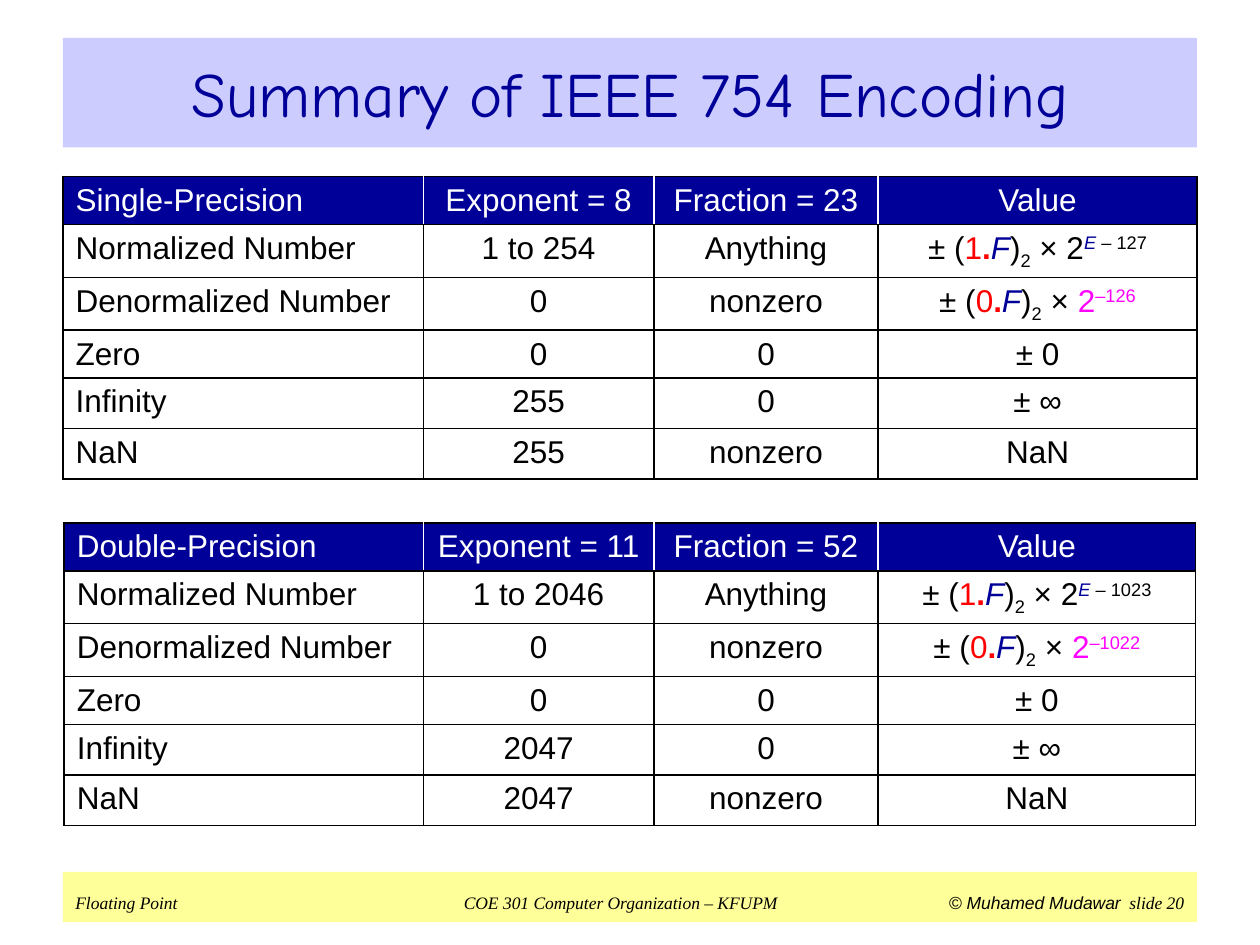
from lxml import etree
from pptx import Presentation
from pptx.dml.color import RGBColor
from pptx.enum.shapes import MSO_SHAPE
from pptx.enum.text import MSO_ANCHOR, PP_ALIGN
from pptx.oxml.ns import qn
from pptx.util import Inches, Pt

RECTANGLE = MSO_SHAPE.RECTANGLE
MIDDLE, TOP = MSO_ANCHOR.MIDDLE, MSO_ANCHOR.TOP
CENTER, LEFT = PP_ALIGN.CENTER, PP_ALIGN.LEFT

COLORS = {
    "navy": "000099", "lavender": "CCCCFF", "yellow": "FFFF99", "black": "000000",
    "white": "FFFFFF", "red": "FF0000", "magenta": "FF00FF",
}
ROW_HEIGHTS = [0.38, 0.42, 0.42, 0.38, 0.4, 0.4]


def add_run(paragraph, text, size=18, font="Arial", color="black",
            bold=False, italic=False, baseline=0):
    run = paragraph.add_run()
    run.text = text
    run.font.size = Pt(size)
    run.font.name = font
    run.font.bold = bold
    run.font.italic = italic
    run.font.color.rgb = RGBColor.from_string(COLORS[color])
    if baseline:
        run.font._element.set("baseline", str(baseline * 1000))


def add_band(slide, box, color, anchor):
    """Add a plain filled rectangle and return its paragraph."""
    band = slide.shapes.add_shape(RECTANGLE, *map(Inches, box))
    band.shadow.inherit = False
    band.fill.solid()
    band.fill.fore_color.rgb = RGBColor.from_string(COLORS[color])
    band.line.fill.background()
    band.text_frame.word_wrap = True
    band.text_frame.vertical_anchor = anchor
    return band.text_frame.paragraphs[0]


def add_title(slide, box):
    paragraph = add_band(slide, box, "lavender", MIDDLE)
    paragraph.alignment = CENTER
    add_run(paragraph, "Summary of IEEE 754 Encoding", 36, "Comic Neue", "navy")


def add_footer(slide, box):
    paragraph = add_band(slide, box, "yellow", TOP)
    paragraph.alignment = LEFT
    tabs = etree.SubElement(paragraph._p.get_or_add_pPr(), qn("a:tabLst"))
    for position, alignment in ((4.31, "ctr"), (8.8, "r")):
        etree.SubElement(tabs, qn("a:tab"), pos=str(Inches(position)), algn=alignment)
    serif = {"size": 10, "font": "Times New Roman", "italic": True}
    add_run(paragraph, "Floating Point\t COE 301 Computer Organization – KFUPM\t ", **serif)
    add_run(paragraph, "© Muhamed Mudawar", 10, italic=True)
    add_run(paragraph, " ")
    add_run(paragraph, "slide 20", **serif)


def significand(leading_digit):
    return [
        ("± (", {}), (leading_digit, {"color": "red"}), (".", {"color": "red", "bold": True}),
        ("F", {"color": "navy", "italic": True}), (")", {}), ("2", {"baseline": -25}),
    ]


def encoding_rows(precision, exponent_bits, fraction_bits):
    """Derive every entry of the table from the field widths."""
    special = 2 ** exponent_bits - 1
    bias = special // 2
    normalized = significand("1") + [
        (" × 2", {}), ("E ", {"color": "navy", "italic": True, "baseline": 30}),
        (f"– {bias}", {"baseline": 30}),
    ]
    denormalized = significand("0") + [
        (" × ", {}), ("2", {"color": "magenta"}),
        (f"–{bias - 1}", {"color": "magenta", "baseline": 30}),
    ]
    return [
        [precision, f"Exponent = {exponent_bits}", f"Fraction = {fraction_bits}", "Value"],
        ["Normalized Number", f"1 to {special - 1}", "Anything", normalized],
        ["Denormalized Number", "0", "nonzero", denormalized],
        ["Zero", "0", "0", "± 0"],
        ["Infinity", str(special), "0", "± ∞"],
        ["NaN", str(special), "nonzero", "NaN"],
    ]


def set_borders(cell, left="black", right="black"):
    properties = cell._tc.get_or_add_tcPr()
    sides = (("lnL", left), ("lnR", right), ("lnT", "black"), ("lnB", "black"))
    for index, (side, color) in enumerate(sides):
        line = etree.Element(qn(f"a:{side}"), w=str(Pt(1)))
        fill = etree.SubElement(line, qn("a:solidFill"))
        etree.SubElement(fill, qn("a:srgbClr"), val=COLORS[color])
        properties.insert(index, line)


def add_encoding_table(slide, box, column_widths, rows):
    table = slide.shapes.add_table(len(rows), len(column_widths), *map(Inches, box)).table
    for column, width in zip(table.columns, column_widths):
        column.width = Inches(width)
    last = len(column_widths) - 1
    for r, entries in enumerate(rows):
        table.rows[r].height = Inches(ROW_HEIGHTS[r])
        for c, entry in enumerate(entries):
            cell = table.cell(r, c)
            paragraph = cell.text_frame.paragraphs[0]
            paragraph.alignment = CENTER if c else LEFT
            if r == 0:
                cell.fill.solid()
                cell.fill.fore_color.rgb = RGBColor.from_string(COLORS["navy"])
                set_borders(cell, "white" if c else "black", "white" if c < last else "black")
                add_run(paragraph, entry, color="white")
                continue
            cell.fill.background()
            set_borders(cell)
            for text, style in [(entry, {})] if isinstance(entry, str) else entry:
                add_run(paragraph, text, **style)


def main():
    presentation = Presentation()
    presentation.slide_width, presentation.slide_height = Inches(10), Inches(7.5)
    slide = presentation.slides.add_slide(presentation.slide_layouts[6])
    add_footer(slide, (0.5, 6.92, 9, 0.4))
    add_title(slide, (0.5, 0.3, 9, 0.87))
    add_encoding_table(slide, (0.5, 1.4, 9, 2.4), (2.86, 1.83, 1.78, 2.53),
                       encoding_rows("Single-Precision", 8, 23))
    add_encoding_table(slide, (0.51, 4.15, 8.98, 2.4), (2.85, 1.83, 1.78, 2.52),
                       encoding_rows("Double-Precision", 11, 52))
    presentation.save("out.pptx")


if __name__ == "__main__":
    main()
